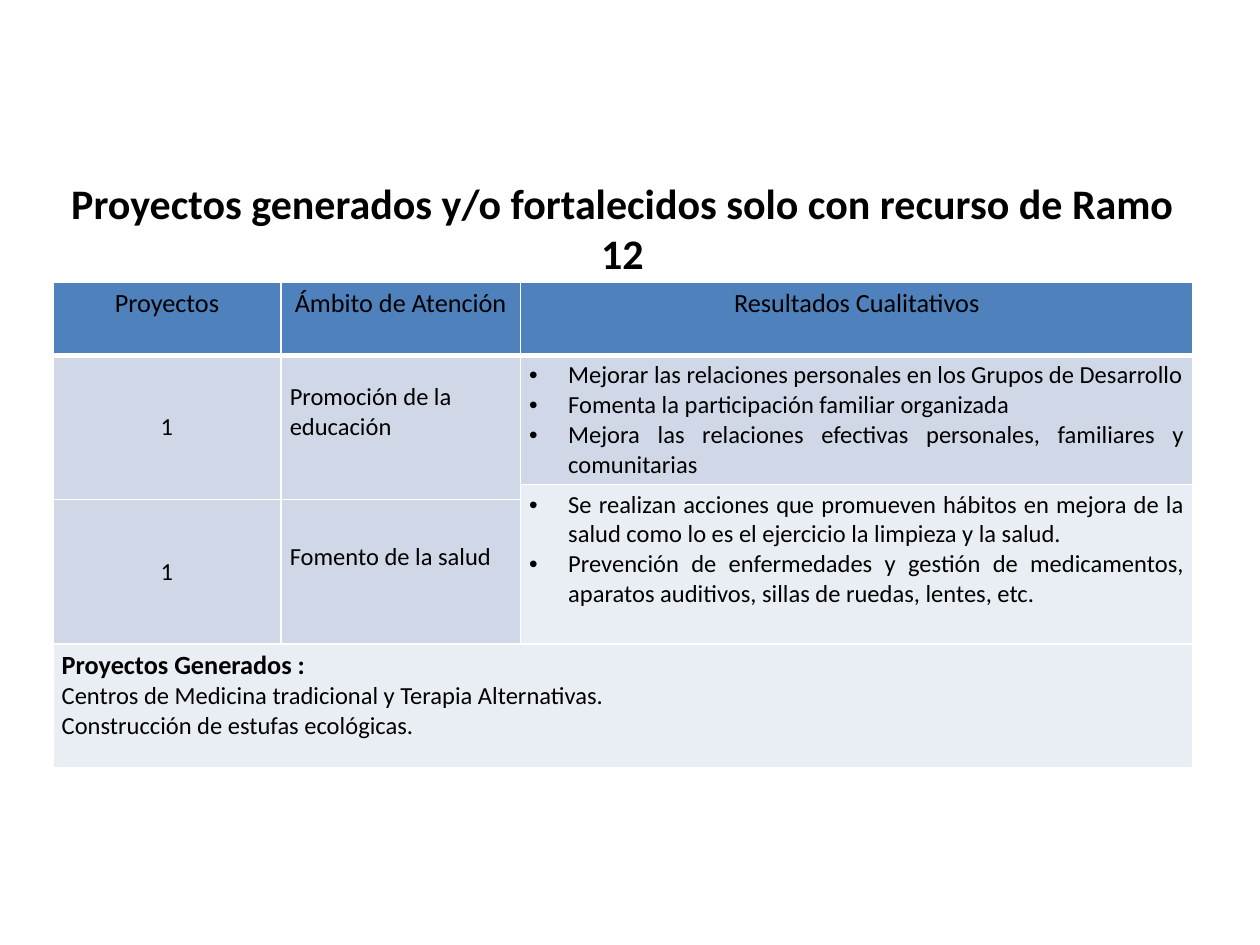
from lxml import etree
from pptx import Presentation, util as u
from pptx.dml.color import RGBColor
from pptx.enum import text
from pptx.oxml import ns

# Slide, grid (inches) and colours
SLIDE_WIDTH, SLIDE_HEIGHT = 10, 7.5
LEFT, TOP = 0.42, 2.24
COLUMNS = [1.81, 1.9, 5.34]
ROWS = [0.58, 1.02, 0.12, 1.14, 0.98]
MARGIN_X, MARGIN_Y = 0.07, 0.04
BULLET_INDENT = 0.31
LIFT = 0.24  # extra bottom margin that raises centred text by half a line

BLACK = RGBColor(0x00, 0x00, 0x00)
WHITE = RGBColor(0xFF, 0xFF, 0xFF)
HEADER_BLUE = RGBColor(0x4F, 0x81, 0xBD)
BAND_DARK = RGBColor(0xD0, 0xD8, 0xE8)
BAND_LIGHT = RGBColor(0xE9, 0xED, 0xF4)

ALIGN = text.PP_ALIGN
ANCHOR = text.MSO_ANCHOR

HEADERS = ["Proyectos", "Ámbito de Atención", "Resultados Cualitativos"]
EDUCATION_RESULTS = [
    "Mejorar las relaciones personales en los Grupos de Desarrollo",
    "Fomenta la participación familiar organizada",
    "Mejora las relaciones efectivas personales, familiares y comunitarias",
]
HEALTH_RESULTS = [
    "Se realizan acciones que promueven hábitos en mejora de la salud como lo es "
    "el ejercicio la limpieza y la salud.",
    "Prevención de enfermedades y gestión de medicamentos, aparatos auditivos, "
    "sillas de ruedas, lentes, etc.",
]
GENERATED = [
    "Proyectos Generados :",
    "Centros de Medicina tradicional y Terapia Alternativas.",
    "Construcción de estufas ecológicas.",
]


def style_font(font, size, bold=False):
    font.name = "Calibri"
    font.size = u.Pt(size)
    font.bold = bold
    font.color.rgb = BLACK


def add_bullet(paragraph):
    properties = paragraph._p.get_or_add_pPr()
    properties.set("marL", str(u.Inches(BULLET_INDENT)))
    properties.set("indent", str(-u.Inches(BULLET_INDENT)))
    etree.SubElement(properties, ns.qn("a:buFont"), typeface="Arial")
    etree.SubElement(properties, ns.qn("a:buChar"), char="•")


def set_borders(cell, bottom_width):
    properties = cell._tc.get_or_add_tcPr()
    for side, width in (("L", 1), ("R", 1), ("T", 1), ("B", bottom_width)):
        line = etree.SubElement(properties, ns.qn(f"a:ln{side}"), w=str(u.Pt(width)))
        fill = etree.SubElement(line, ns.qn("a:solidFill"))
        etree.SubElement(fill, ns.qn("a:srgbClr"), val=str(WHITE))


def style_cell(cell, color, bottom_width=1):
    set_borders(cell, bottom_width)
    cell.fill.solid()
    cell.fill.fore_color.rgb = color
    cell.margin_left = cell.margin_right = u.Inches(MARGIN_X)
    cell.margin_top = cell.margin_bottom = u.Inches(MARGIN_Y)


def write_cell(cell, lines, size=14, align=ALIGN.LEFT, anchor=ANCHOR.MIDDLE,
               bullets=False, lift=0):
    cell.vertical_anchor = anchor
    cell.margin_bottom = u.Inches(MARGIN_Y + lift)
    frame = cell.text_frame
    frame.text = "\n".join(lines)
    for paragraph in frame.paragraphs:
        if bullets:
            add_bullet(paragraph)
        paragraph.alignment = align
        style_font(paragraph.font, size)


def add_title(slide, title):
    shape = slide.shapes.add_textbox(u.Inches(0.32), u.Inches(1.36),
                                     u.Inches(9.24), u.Inches(0.5))
    frame = shape.text_frame
    frame.word_wrap = True
    frame.auto_size = text.MSO_AUTO_SIZE.SHAPE_TO_FIT_TEXT
    paragraph = frame.paragraphs[0]
    paragraph.text = title
    paragraph.alignment = ALIGN.CENTER
    style_font(paragraph.font, 24, bold=True)


def add_grid(slide):
    table = slide.shapes.add_table(
        len(ROWS), len(COLUMNS), u.Inches(LEFT), u.Inches(TOP),
        u.Inches(sum(COLUMNS)), u.Inches(sum(ROWS))).table
    for column, width in zip(table.columns, COLUMNS):
        column.width = u.Inches(width)
    for row, height in zip(table.rows, ROWS):
        row.height = u.Inches(height)

    # Fills and borders
    band_colors = [HEADER_BLUE, BAND_DARK, BAND_DARK, BAND_DARK, BAND_LIGHT]
    for row, color in enumerate(band_colors):
        for column in range(len(COLUMNS)):
            is_health_result = column == 2 and row in (2, 3)
            style_cell(table.cell(row, column),
                       BAND_LIGHT if is_health_result else color,
                       bottom_width=3 if row == 0 else 1)

    # Merged areas
    for first, last in (((1, 0), (2, 0)), ((1, 1), (2, 1)),
                        ((2, 2), (3, 2)), ((4, 0), (4, 2))):
        table.cell(*first).merge(table.cell(*last))
    return table


def fill_table(table):
    # Header row
    for column, header in enumerate(HEADERS):
        write_cell(table.cell(0, column), [header], size=15,
                   align=ALIGN.CENTER, anchor=ANCHOR.TOP)

    # Projects: area, results, and the rows where each begins
    projects = [
        (1, "Promoción de la educación", 1, EDUCATION_RESULTS, 0),
        (3, "Fomento de la salud", 2, HEALTH_RESULTS, LIFT),
    ]
    for row, area, result_row, results, result_lift in projects:
        write_cell(table.cell(row, 0), ["1"], align=ALIGN.CENTER)
        write_cell(table.cell(row, 1), [area], lift=LIFT)
        write_cell(table.cell(result_row, 2), results, align=ALIGN.JUSTIFY,
                   bullets=True, lift=result_lift)

    # Generated projects
    summary = table.cell(4, 0)
    write_cell(summary, GENERATED, anchor=ANCHOR.TOP)
    style_font(summary.text_frame.paragraphs[0].font, 15, bold=True)


def main():
    presentation = Presentation()
    presentation.slide_width = u.Inches(SLIDE_WIDTH)
    presentation.slide_height = u.Inches(SLIDE_HEIGHT)
    slide = presentation.slides.add_slide(presentation.slide_layouts[6])
    fill_table(add_grid(slide))
    add_title(slide, "Proyectos generados y/o fortalecidos solo con recurso de Ramo 12")
    presentation.save("out.pptx")


if __name__ == "__main__":
    main()
